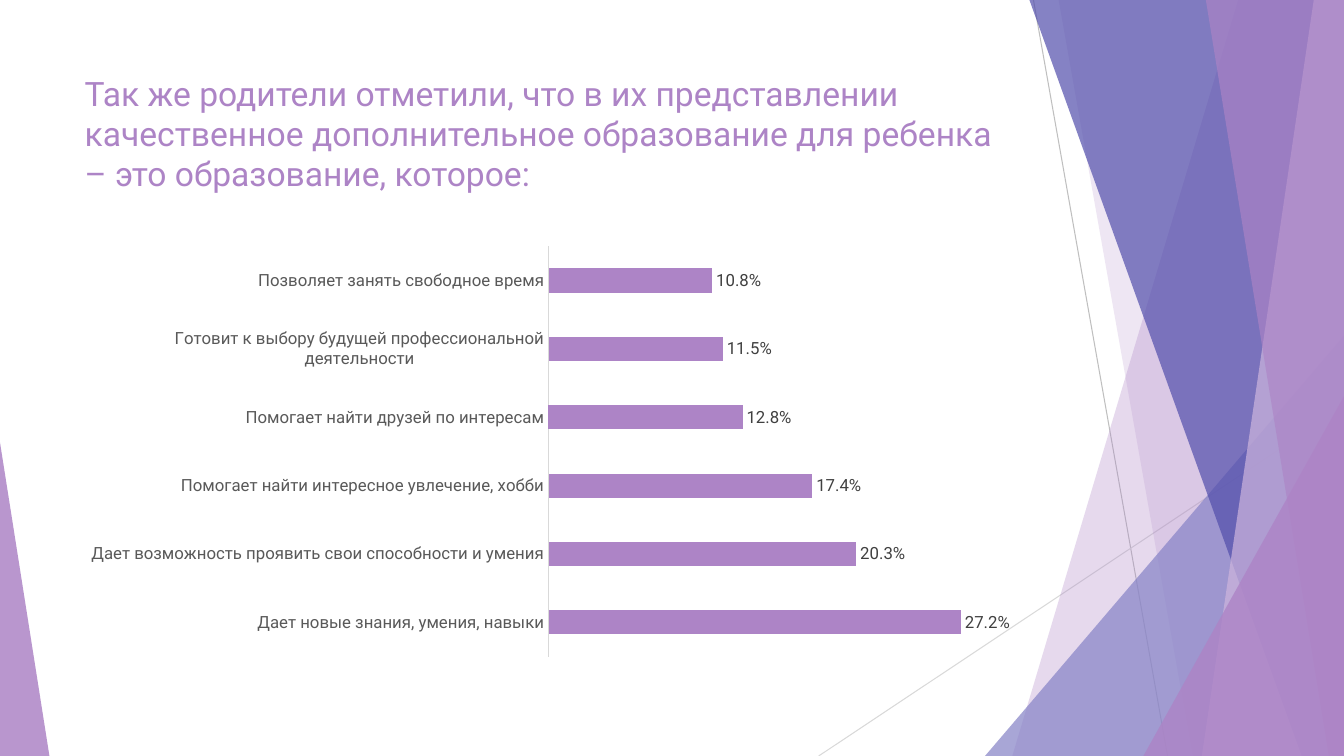
from lxml import etree
from pptx import Presentation, util as u
from pptx.chart.data import CategoryChartData
from pptx.dml.color import RGBColor
from pptx.enum import chart as ch, shapes as sh, text as tx
from pptx.oxml import parse_xml
from pptx.oxml.ns import qn

WIDE, HIGH = 13.33, 7.5
FONT = "Roboto"
LILAC = "AD84C6"
ANSWERS = [
    ("Дает новые знания, умения, навыки", 0.272),
    ("Дает возможность проявить свои способности и умения", 0.203),
    ("Помогает найти интересное увлечение, хобби", 0.174),
    ("Помогает найти друзей по интересам", 0.128),
    ("Готовит к выбору будущей профессиональной деятельности", 0.115),
    ("Позволяет занять свободное время", 0.108),
]


def rgb(code):
    return RGBColor.from_string(code)


def style(font, size, color):
    font.name, font.size, font.bold = FONT, u.Pt(size), False
    font.color.rgb = rgb(color)


def write(frame, words, size=12, color="000000", align=tx.PP_ALIGN.LEFT):
    par = frame.paragraphs[0]
    par.alignment = align
    run = par.add_run()
    run.text = words
    style(run.font, size, color)


def paint(shape, color, alpha):
    shape.shadow.inherit = False
    shape.fill.solid()
    shape.fill.fore_color.rgb = rgb(color)
    shape.line.fill.background()
    tint = shape.fill._xPr.find(qn("a:solidFill"))[0]
    etree.SubElement(tint, qn("a:alpha")).set("val", str(alpha * 1000))


def ray(slide, x1, y1, x2, y2, color):
    line = slide.shapes.add_connector(
        sh.MSO_CONNECTOR.STRAIGHT, *map(u.Inches, (x1, y1, x2, y2)))
    line.line.color.rgb = rgb(color)
    line.line.width = u.Pt(0.75)
    etree.SubElement(line._element.spPr, qn("a:effectLst"))


def band(slide, top, foot, color, alpha):
    """Facet from a slanted left edge to the right side of the slide."""
    pts = [(u.Inches(x), u.Inches(y)) for x, y in
           ((top, 0), (WIDE, 0), (WIDE, HIGH), (foot, HIGH))]
    pen = slide.shapes.build_freeform(*pts[0])
    pen.add_line_segments(pts[1:], close=True)
    paint(pen.convert_to_shape(), color, alpha)


def wedge(slide, left, wide, high, tip, color, alpha):
    """Triangle standing on the bottom edge of the slide."""
    shape = slide.shapes.add_shape(
        sh.MSO_SHAPE.ISOSCELES_TRIANGLE,
        *map(u.Inches, (left, HIGH - high, wide, high)))
    shape.adjustments[0] = tip
    paint(shape, color, alpha)


def decor(slide):
    ray(slide, 10.25, 0, 11.58, HIGH, "BFBFBF")
    ray(slide, WIDE, 4.03, 8.12, HIGH, "D9D9D9")
    band(slide, 12.28, 10.04, LILAC, 30)
    band(slide, 10.5, 11.83, LILAC, 20)
    wedge(slide, 9.77, 3.56, 4.17, 1, "8784C7", 72)
    band(slide, 10.21, 12.91, "524EAB", 70)
    band(slide, 13.03, 11.92, "CEB5DD", 70)
    band(slide, 11.96, 13.18, LILAC, 65)
    wedge(slide, 11.34, 1.99, 3.57, 1, LILAC, 80)
    wedge(slide, 0, 0.49, 3.11, 0, LILAC, 85)


def heading(slide, box, words):
    title = slide.shapes.title
    title.left, title.top, title.width, title.height = map(u.Inches, box)
    frame = title.text_frame
    frame.word_wrap = True
    frame.auto_size = tx.MSO_AUTO_SIZE.NONE
    frame.vertical_anchor = tx.MSO_ANCHOR.TOP
    write(frame, words, size=24, color=LILAC)


def place(chart, x, y, w, h):
    """Fix the inner plot area as fractions of the chart."""
    area = chart._chartSpace.chart.plotArea
    for old in area.findall(qn("c:layout")):
        area.remove(old)
    sizes = "".join(f'<c:{k} val="{v}"/>' for k, v in zip("xywh", (x, y, w, h)))
    area.insert(0, parse_xml(
        '<c:layout xmlns:c="http://schemas.openxmlformats.org/drawingml/2006/chart">'
        '<c:manualLayout><c:layoutTarget val="inner"/><c:xMode val="edge"/>'
        f'<c:yMode val="edge"/>{sizes}</c:manualLayout></c:layout>'))


def bars(slide, box, rows):
    data = CategoryChartData(number_format="0.0%")
    data.categories = [name for name, _ in rows]
    data.add_series("Series 1", [share for _, share in rows])
    chart = slide.shapes.add_chart(
        ch.XL_CHART_TYPE.BAR_CLUSTERED, *map(u.Inches, box), data).chart
    chart.has_legend = chart.has_title = False
    style(chart.font, 10, "000000")
    place(chart, 0.5, 0.02, 0.48, 0.96)

    # Axes
    cat, val = chart.category_axis, chart.value_axis
    cat.major_tick_mark = cat.minor_tick_mark = ch.XL_TICK_MARK.NONE
    cat.format.line.color.rgb = rgb("D9D9D9")
    cat.format.line.width = u.Pt(0.75)
    style(cat.tick_labels.font, 12, "595959")
    val.minimum_scale, val.maximum_scale = 0, 0.3
    val.has_major_gridlines = val.visible = False

    # Bars and their values
    plot = chart.plots[0]
    plot.gap_width, plot.vary_by_categories = 182, False
    fill = plot.series[0].format.fill
    fill.solid()
    fill.fore_color.rgb = rgb(LILAC)
    marks = plot.series[0].data_labels
    marks.show_value = True
    marks.number_format, marks.number_format_is_linked = "0.0%", False
    marks.position = ch.XL_LABEL_POSITION.OUTSIDE_END
    style(marks.font, 12, "404040")


def main():
    deck = Presentation()
    deck.slide_width, deck.slide_height = u.Inches(WIDE), u.Inches(HIGH)
    slide = deck.slides.add_slide(deck.slide_layouts[5])
    decor(slide)
    heading(slide, (0.74, 0.67, 9.4, 1.44),
            "Так же родители отметили, что в их представлении качественное "
            "дополнительное образование для ребенка – это образование, которое:")
    bars(slide, (0.74, 2.36, 9.4, 4.24), ANSWERS)
    deck.save("out.pptx")


if __name__ == "__main__":
    main()
